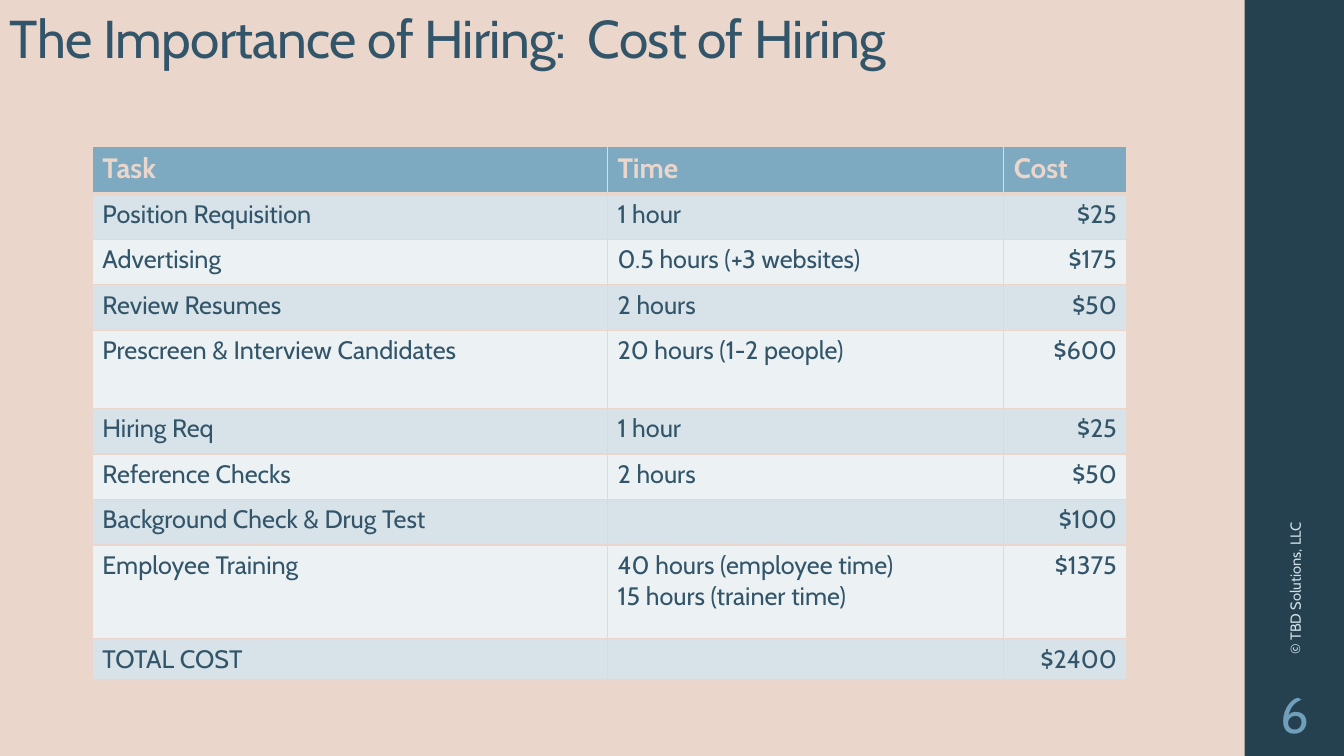
import pptx
import pptx.dml.color
import pptx.enum.shapes
import pptx.enum.text
import pptx.oxml
import pptx.oxml.ns
import pptx.util

Pt = pptx.util.Pt
ALIGN = pptx.enum.text.PP_ALIGN
ANCHOR = pptx.enum.text.MSO_ANCHOR
FONT = "Cabin"
COLORS = {
    "background": "EBD6CC",
    "sidebar": "25404F",
    "text": "325569",
    "header": "7DA9C1",
    "odd_row": "D7E2E9",
    "even_row": "ECF1F4",
    "number": "6F9FBA",
    "copyright": "CFDFE8",
}
HEADINGS = ("Task", "Time", "Cost")
TASKS = [
    ("Position Requisition", "1 hour", "$25"),
    ("Advertising", "0.5 hours (+3 websites)", "$175"),
    ("Review Resumes", "2 hours", "$50"),
    ("Prescreen & Interview Candidates", "20 hours (1-2 people)", "$600"),
    ("Hiring Req", "1 hour", "$25"),
    ("Reference Checks", "2 hours", "$50"),
    ("Background Check & Drug Test", "", "$100"),
    ("Employee Training", "40 hours (employee time)\v15 hours (trainer time)", "$1375"),
    ("TOTAL COST", "", "$2400"),
]
COLUMN_WIDTHS = (368, 283, 88)
HEADER_HEIGHT = 34
ROW_HEIGHT = 32.5
SPECIAL_HEIGHTS = {4: 56, 8: 67, 9: 29}


def rgb(name):
    return pptx.dml.color.RGBColor.from_string(COLORS[name])


def paint(fill, color):
    fill.solid()
    fill.fore_color.rgb = rgb(color)


def format_paragraph(paragraph, size, color, bold=False, align=ALIGN.LEFT):
    paragraph.alignment = align
    for run in paragraph.runs:
        run.font.name = FONT
        run.font.size = Pt(size)
        run.font.bold = bold
        run.font.color.rgb = rgb(color)


def add_text(slide, text, left, top, width, height, size, color,
             align=ALIGN.LEFT, anchor=ANCHOR.MIDDLE):
    box = slide.shapes.add_textbox(Pt(left), Pt(top), Pt(width), Pt(height))
    frame = box.text_frame
    frame.word_wrap = True
    frame.vertical_anchor = anchor
    frame.text = text
    format_paragraph(frame.paragraphs[0], size, color, align=align)
    return box


def add_sidebar(slide):
    sidebar = slide.shapes.add_shape(
        pptx.enum.shapes.MSO_SHAPE.RECTANGLE, Pt(889), Pt(0), Pt(72), Pt(540))
    sidebar.shadow.inherit = False
    paint(sidebar.fill, "sidebar")
    sidebar.line.fill.background()


def add_title(slide, text):
    title = add_text(slide, text, 0, -53.3, 685, 106.6, 38, "text", anchor=ANCHOR.BOTTOM)
    paragraph = title.text_frame.paragraphs[0]
    paragraph.line_spacing = 0.9
    paragraph.runs[0]._r.get_or_add_rPr().set("spc", "-50")


def set_borders(cell, top, bottom):
    properties = cell._tc.get_or_add_tcPr()
    for side, width in (("L", 1), ("R", 1), ("T", top), ("B", bottom)):
        properties.append(pptx.oxml.parse_xml(
            f'<a:ln{side} {pptx.oxml.ns.nsdecls("a")} w="{Pt(width)}">'
            f'<a:solidFill><a:srgbClr val="{COLORS["background"]}"/></a:solidFill>'
            f'</a:ln{side}>'))


def fill_cell(cell, text, row, column):
    is_header = row == 0
    set_borders(cell, 3 if row == 1 else 1, 3 if is_header else 1)
    paint(cell.fill, "header" if is_header else "odd_row" if row % 2 else "even_row")
    cell.text = text
    align = ALIGN.RIGHT if column == 2 and not is_header else ALIGN.LEFT
    format_paragraph(cell.text_frame.paragraphs[0], 20 if is_header else 18,
                     "background" if is_header else "text", is_header, align)


def add_cost_table(slide):
    rows = [HEADINGS] + TASKS
    heights = [HEADER_HEIGHT] + [
        SPECIAL_HEIGHTS.get(row, ROW_HEIGHT) for row in range(1, len(rows))]
    table = slide.shapes.add_table(
        len(rows), len(HEADINGS), Pt(66), Pt(104.4),
        Pt(sum(COLUMN_WIDTHS)), Pt(sum(heights))).table
    table.horz_banding = False
    for column, width in zip(table.columns, COLUMN_WIDTHS):
        column.width = Pt(width)
    for row, (texts, height) in enumerate(zip(rows, heights)):
        table.rows[row].height = Pt(height)
        for column, text in enumerate(texts):
            fill_cell(table.cell(row, column), text, row, column)


def main():
    presentation = pptx.Presentation()
    presentation.slide_width = Pt(960)
    presentation.slide_height = Pt(540)
    slide = presentation.slides.add_slide(presentation.slide_layouts[6])
    paint(slide.background.fill, "background")
    add_sidebar(slide)
    add_title(slide, "The Importance of Hiring:  Cost of Hiring")
    add_text(slide, "6", 889, 486, 72, 47, 36, "number", align=ALIGN.CENTER)
    add_cost_table(slide)
    copyright_line = add_text(
        slide, "© TBD Solutions, LLC", 784, 319, 282, 29, 10.5, "copyright")
    copyright_line.rotation = 270
    presentation.save("out.pptx")


if __name__ == "__main__":
    main()
